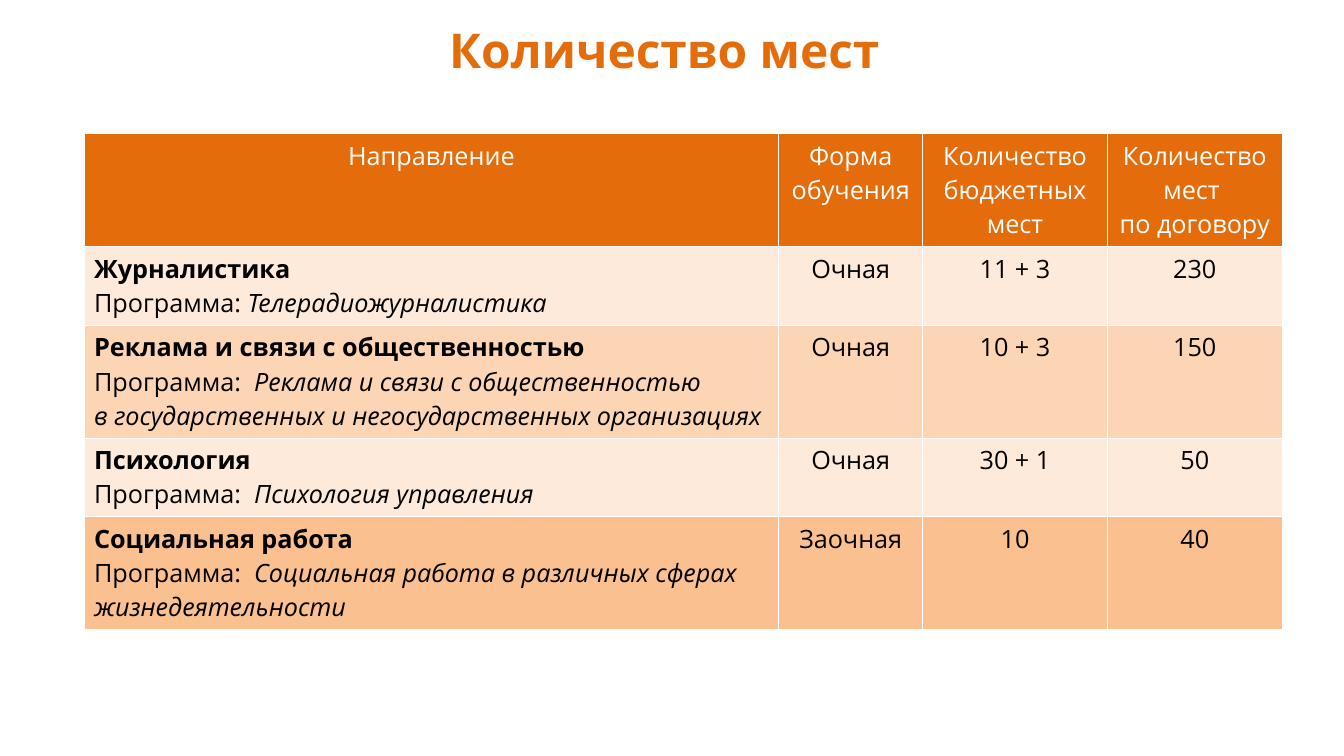
from lxml.etree import SubElement
from pptx import Presentation
from pptx.dml.color import RGBColor
from pptx.enum.text import MSO_ANCHOR as Anchor, PP_ALIGN as Align
from pptx.oxml.ns import qn
from pptx.util import Inches, Pt

FONT = "Open Sans"
COLORS = {
    "orange": "E46C0A",
    "white": "FFFFFF",
    "black": "000000",
    "pale": "FDEADA",
    "peach": "FCD5B5",
    "apricot": "FAC090",
}
WIDTHS = [10.34, 2.14, 2.75, 2.6]
TALL, SHORT = 1.68, 1.17
HEIGHTS = [TALL, SHORT, TALL, SHORT, TALL]
HEADS = [
    ["Направление"],
    ["Форма обучения"],
    ["Количество бюджетных мест"],
    ["Количество мест ", "по договору"],
]
ROWS = [
    ("pale", "Журналистика", "Программа: ", ["Телерадиожурналистика"],
     ["Очная", "11 + 3", "230"]),
    ("peach", "Реклама и связи с общественностью", "Программа:  ",
     ["Реклама и связи с общественностью",
      "в государственных и негосударственных организациях"],
     ["Очная", "10 + 3", "150"]),
    ("pale", "Психология", "Программа:  ", ["Психология управления"],
     ["Очная", "30 + 1", "50"]),
    ("apricot", "Социальная работа", "Программа:  ",
     ["Социальная работа в различных сферах жизнедеятельности"],
     ["Заочная", "10", "40"]),
]


def rgb(name):
    """Return the named colour."""
    return RGBColor.from_string(COLORS[name])


def add_run(para, text, color, size=27, bold=False, italic=False):
    """Add one styled run to a paragraph."""
    run = para.add_run()
    run.text = text
    font = run.font
    font.name, font.size = FONT, Pt(size)
    font.bold, font.italic = bold, italic
    font.color.rgb = rgb(color)


def add_title(slide, text):
    """Add the centred slide title."""
    box = slide.shapes.add_textbox(
        Inches(1.49), Inches(0.36), Inches(17), Inches(1.34))
    frame = box.text_frame
    frame.word_wrap = True
    frame.vertical_anchor = Anchor.MIDDLE
    frame.margin_top, frame.margin_bottom = 0, Inches(0.59)
    frame.margin_left, frame.margin_right = Inches(0.1), Inches(0.3)
    para = frame.paragraphs[0]
    para.alignment = Align.CENTER
    add_run(para, text, "orange", 51.3, bold=True)


def set_edges(cell):
    """Give a cell thin white borders."""
    props = cell._tc.get_or_add_tcPr()
    for side in ("lnL", "lnR", "lnT", "lnB"):
        line = SubElement(props, qn(f"a:{side}"), w=str(Pt(1)))
        fill = SubElement(line, qn("a:solidFill"))
        SubElement(fill, qn("a:srgbClr"), val=COLORS["white"])


def fill_cell(cell, paras, fill, color="black", align=Align.CENTER):
    """Style a cell and write its paragraphs, each a list of (text, style)."""
    set_edges(cell)
    cell.fill.solid()
    cell.fill.fore_color.rgb = rgb(fill)
    cell.margin_left = cell.margin_right = Inches(0.15)
    cell.margin_top = cell.margin_bottom = Inches(0.07)
    frame = cell.text_frame
    for num, runs in enumerate(paras):
        para = frame.add_paragraph() if num else frame.paragraphs[0]
        para.alignment = align
        for text, style in runs:
            add_run(para, text, color, **style)


def course_paras(name, label, lines):
    """Return the paragraphs that describe one course."""
    italic = {"italic": True}
    first, *rest = lines
    return [[(name, {"bold": True})], [(label, {}), (first, italic)],
            *[[(line, italic)] for line in rest]]


def add_places(slide):
    """Add the table of places by course."""
    table = slide.shapes.add_table(
        len(HEIGHTS), len(WIDTHS), Inches(1.25), Inches(1.99),
        Inches(sum(WIDTHS)), Inches(sum(HEIGHTS))).table
    table.horz_banding = False
    table.first_row = False
    for col, width in zip(table.columns, WIDTHS):
        col.width = Inches(width)
    for row, height in zip(table.rows, HEIGHTS):
        row.height = Inches(height)
    for col, lines in enumerate(HEADS):
        paras = [[(line, {})] for line in lines]
        fill_cell(table.cell(0, col), paras, "orange", "white")
    for row, (fill, name, label, lines, values) in enumerate(ROWS, 1):
        paras = course_paras(name, label, lines)
        fill_cell(table.cell(row, 0), paras, fill, align=Align.LEFT)
        for col, value in enumerate(values, 1):
            fill_cell(table.cell(row, col), [[(value, {})]], fill)


def main():
    """Build and save the slide."""
    deck = Presentation()
    deck.slide_width, deck.slide_height = Inches(20), Inches(11.25)
    slide = deck.slides.add_slide(deck.slide_layouts[6])
    add_title(slide, "Количество мест")
    add_places(slide)
    deck.save("out.pptx")


if __name__ == "__main__":
    main()
